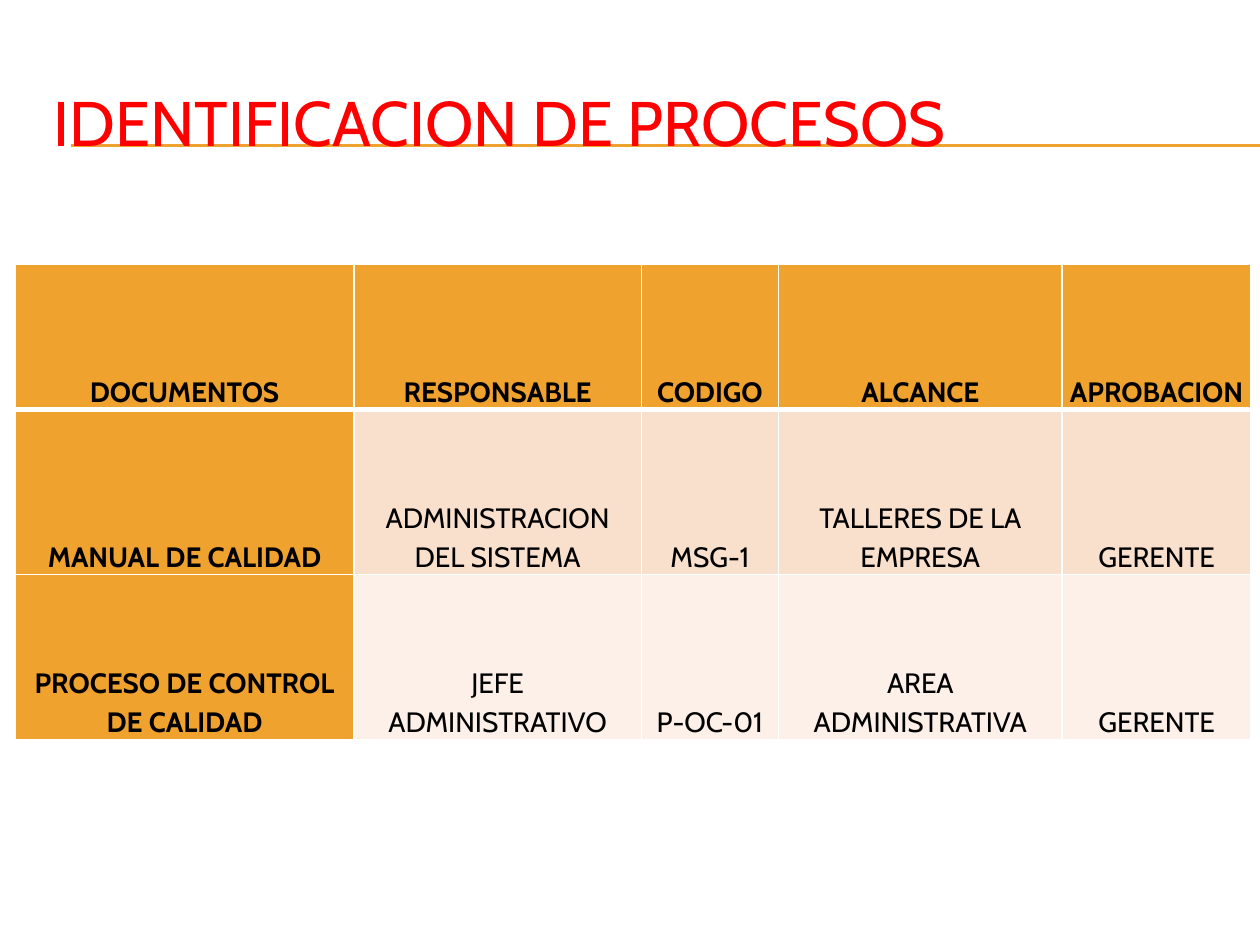
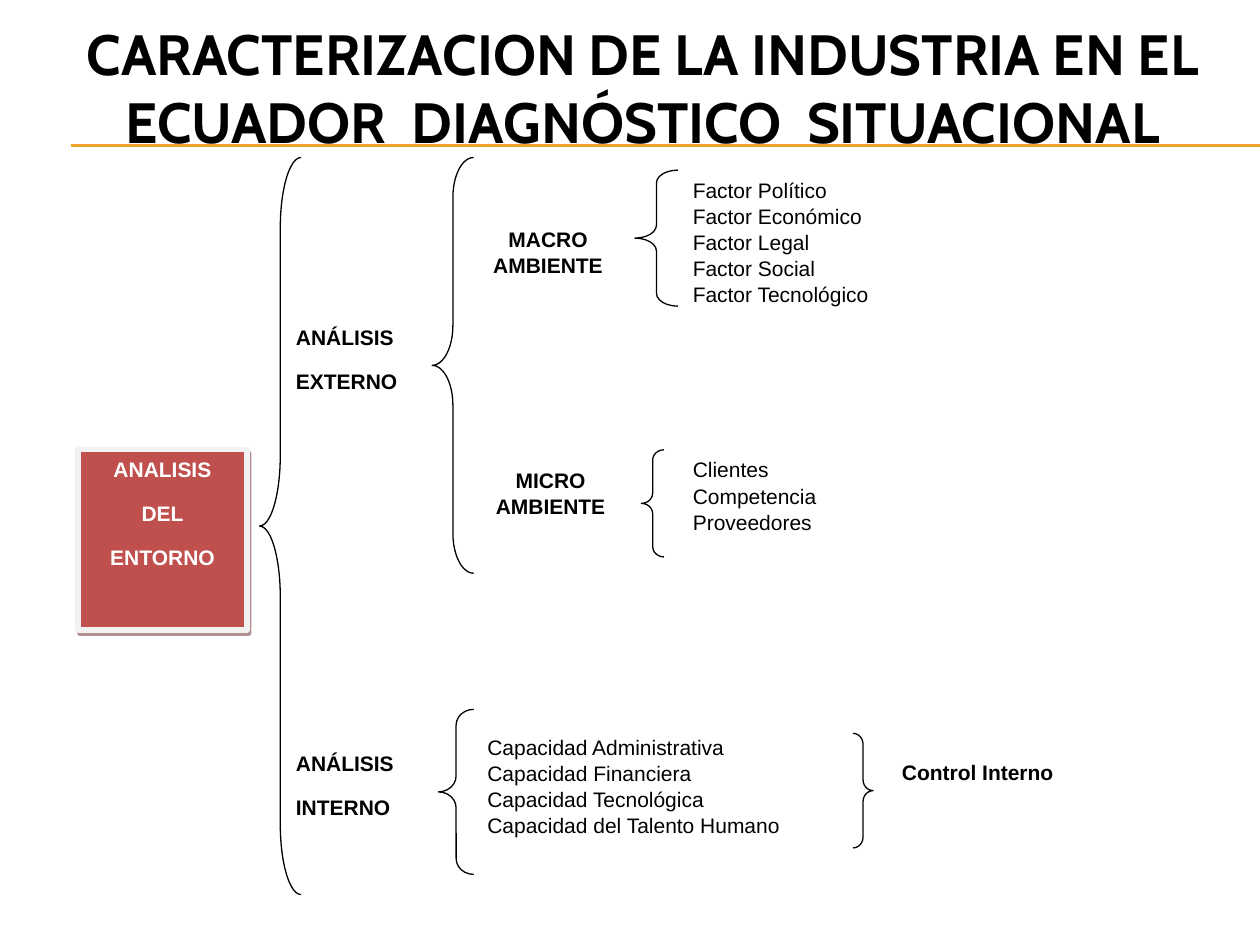
import dataclasses

import lxml.etree
import pptx
import pptx.dml.color
import pptx.enum.shapes
import pptx.enum.text
import pptx.oxml.ns
import pptx.slide
import pptx.text.text
import pptx.util

PX_PER_INCH = 100
EMU_PER_PX = 914400 // PX_PER_INCH
ORANGE, PEACH, CREAM = "F0A22E", "F9E0CD", "FCF0E8"
WHITE, BLACK, RED = "FFFFFF", "000000", "FF0000"
BRICK, PALE_GREY, SHADOW = "C0504D", "F2F2F2", "622423"
TITLE_FONT, BODY_FONT = "Cabin", "Arial"

ALIGN = pptx.enum.text.PP_ALIGN
ANCHOR = pptx.enum.text.MSO_ANCHOR
SHAPE = pptx.enum.shapes.MSO_SHAPE


@dataclasses.dataclass(frozen=True)
class Area:
    left: int
    top: int
    width: int
    height: int

    def emu(self) -> tuple[int, int, int, int]:
        return px(self.left), px(self.top), px(self.width), px(self.height)


@dataclasses.dataclass(frozen=True)
class Style:
    size: float
    font: str = BODY_FONT
    color: str = BLACK
    bold: bool = False
    align: ALIGN = ALIGN.LEFT
    line_spacing: float = 1.0


@dataclasses.dataclass(frozen=True)
class Label:
    area: Area
    lines: tuple[str, ...]
    style: Style
    space_after: int = 0
    fill: str = WHITE
    line: str = WHITE
    line_width: float = 0.75


@dataclasses.dataclass(frozen=True)
class Brace:
    area: Area
    curve: float
    kind: SHAPE = SHAPE.LEFT_BRACE


LIST = Style(12, line_spacing=1.04)
HEADING = dataclasses.replace(LIST, bold=True)
CENTERED = dataclasses.replace(HEADING, align=ALIGN.CENTER)
ROOT = dataclasses.replace(CENTERED, color=WHITE)
CELL = Style(16, TITLE_FONT, align=ALIGN.CENTER, line_spacing=1.15)

PROCESS_AREA = Area(12, 210, 980, 377)
PROCESS_COLUMNS = (269, 228, 109, 225, 150)
PROCESS_ROWS = (115, 131, 131)
ROW_FILLS = (ORANGE, PEACH, CREAM)
PROCESSES = (
    ("DOCUMENTOS", "RESPONSABLE", "CODIGO", "ALCANCE", "APROBACION"),
    ("MANUAL DE CALIDAD", "ADMINISTRACION DEL SISTEMA", "MSG-1",
     "TALLERES DE LA EMPRESA", "GERENTE"),
    ("PROCESO DE CONTROL DE CALIDAD", "JEFE ADMINISTRATIVO", "P-OC-01",
     "AREA ADMINISTRATIVA", "GERENTE"),
)

LABELS = (
    Label(Area(706, 597, 240, 28), ("Control Interno",), HEADING),
    Label(Area(225, 252, 119, 83), ("ANÁLISIS", "EXTERNO"), HEADING, 10),
    Label(Area(225, 590, 119, 83), ("ANÁLISIS", "INTERNO"), HEADING, 10),
    Label(Area(366, 174, 138, 69), ("MACRO AMBIENTE",), CENTERED),
    Label(Area(368, 365, 138, 69), ("MICRO AMBIENTE",), CENTERED),
    Label(Area(540, 135, 197, 124),
          ("Factor Político", "Factor Económico", "Factor Legal",
           "Factor Social", "Factor Tecnológico"), LIST),
    Label(Area(540, 357, 161, 77), ("Clientes", "Competencia", "Proveedores"), LIST),
    Label(Area(377, 577, 313, 104),
          ("Capacidad Administrativa", "Capacidad Financiera",
           "Capacidad Tecnológica", "Capacidad del Talento Humano"), LIST),
)
BRACES = (
    Brace(Area(504, 135, 34, 108), 0.3),
    Brace(Area(509, 357, 18, 85), 0.45),
    Brace(Area(348, 563, 28, 131), 0.45),
    Brace(Area(343, 125, 33, 330), 0.96),
    Brace(Area(677, 582, 16, 91), 0.54, SHAPE.RIGHT_BRACE),
    Brace(Area(206, 125, 33, 585), 1.7),
)
ENVIRONMENT = Label(Area(62, 357, 134, 143), ("ANALISIS", "DEL", "ENTORNO"),
                    ROOT, 10, BRICK, PALE_GREY, 3)


def px(length: int) -> int:
    return pptx.util.Emu(length * EMU_PER_PX)


def rgb(color: str) -> pptx.dml.color.RGBColor:
    return pptx.dml.color.RGBColor.from_string(color)


def add_xml(parent, tag: str, **attributes: str):
    return lxml.etree.SubElement(parent, pptx.oxml.ns.qn(tag), attributes)


def write(frame: pptx.text.text.TextFrame, lines: tuple[str, ...], style: Style,
          space_after: int = 0) -> None:
    frame.word_wrap = True
    for index, line in enumerate(lines):
        para = frame.add_paragraph() if index else frame.paragraphs[0]
        para.text = line
        para.alignment = style.align
        para.line_spacing = style.line_spacing
        para.space_after = pptx.util.Pt(space_after)
        para.font.name = style.font
        para.font.size = pptx.util.Pt(style.size)
        para.font.bold = style.bold
        para.font.color.rgb = rgb(style.color)


def add_page(deck, title: str, area: Area, style: Style) -> pptx.slide.Slide:
    page = deck.slides.add_slide(deck.slide_layouts[6])
    for top in (115, 116):
        rule = page.shapes.add_connector(
            pptx.enum.shapes.MSO_CONNECTOR.STRAIGHT, px(56), px(top), px(1000), px(top))
        rule.line.color.rgb = rgb(ORANGE)
        rule.line.width = pptx.util.Pt(0.75)
        add_xml(rule._element.spPr, "a:effectLst")
    box = page.shapes.add_textbox(*area.emu())
    box.text_frame.vertical_anchor = ANCHOR.MIDDLE
    write(box.text_frame, (title,), style)
    return page


def add_label(page: pptx.slide.Slide, label: Label):
    box = page.shapes.add_shape(SHAPE.RECTANGLE, *label.area.emu())
    box.shadow.inherit = False
    box.fill.solid()
    box.fill.fore_color.rgb = rgb(label.fill)
    box.line.color.rgb = rgb(label.line)
    box.line.width = pptx.util.Pt(label.line_width)
    box.text_frame.vertical_anchor = ANCHOR.TOP
    write(box.text_frame, label.lines, label.style, label.space_after)
    return box


def add_brace(page: pptx.slide.Slide, brace: Brace) -> None:
    shape = page.shapes.add_shape(brace.kind, *brace.area.emu())
    shape.shadow.inherit = False
    shape.adjustments[0] = brace.curve
    shape.fill.background()
    shape.line.color.rgb = rgb(BLACK)
    shape.line.width = pptx.util.Pt(0.75)


def add_drop_shadow(box) -> None:
    effects = box._element.spPr.find(pptx.oxml.ns.qn("a:effectLst"))
    shadow = add_xml(effects, "a:outerShdw", blurRad="0",
                     dist=str(pptx.util.Pt(2.2)), dir=str(63 * 60000),
                     algn="ctr", rotWithShape="0")
    color = add_xml(shadow, "a:srgbClr", val=SHADOW)
    add_xml(color, "a:alpha", val="50000")


def add_borders(cell, top: int, bottom: int) -> None:
    properties = cell._tc.get_or_add_tcPr()
    for side, width in (("L", 1), ("R", 1), ("T", top), ("B", bottom)):
        border = add_xml(properties, f"a:ln{side}", w=str(pptx.util.Pt(width)))
        add_xml(add_xml(border, "a:solidFill"), "a:srgbClr", val=WHITE)


def add_process_table(page: pptx.slide.Slide) -> None:
    table = page.shapes.add_table(
        len(PROCESS_ROWS), len(PROCESS_COLUMNS), *PROCESS_AREA.emu()).table
    table.horz_banding = False
    for column, width in zip(table.columns, PROCESS_COLUMNS):
        column.width = px(width)
    for row, height in zip(table.rows, PROCESS_ROWS):
        row.height = px(height)
    for row, texts in enumerate(PROCESSES):
        for column, text in enumerate(texts):
            cell = table.cell(row, column)
            is_heading = row == 0 or column == 0
            add_borders(cell, 3 if row == 1 else 1, 3 if row == 0 else 1)
            cell.fill.solid()
            cell.fill.fore_color.rgb = rgb(ORANGE if is_heading else ROW_FILLS[row])
            cell.vertical_anchor = ANCHOR.BOTTOM
            cell.margin_left = cell.margin_right = px(5)
            cell.margin_top = cell.margin_bottom = 0
            write(cell.text_frame, (text,), dataclasses.replace(CELL, bold=is_heading))


def main() -> None:
    deck = pptx.Presentation()
    deck.slide_width, deck.slide_height = px(1000), px(750)

    processes = add_page(deck, "IDENTIFICACION DE PROCESOS", Area(33, 50, 950, 92),
                         Style(36, TITLE_FONT, RED))
    add_process_table(processes)

    diagnosis = add_page(
        deck, "CARACTERIZACION DE LA INDUSTRIA EN EL ECUADOR  DIAGNÓSTICO  SITUACIONAL",
        Area(20, 23, 980, 92),
        Style(32.4, TITLE_FONT, bold=True, align=ALIGN.CENTER))
    for label in LABELS:
        add_label(diagnosis, label)
    for brace in BRACES:
        add_brace(diagnosis, brace)
    add_drop_shadow(add_label(diagnosis, ENVIRONMENT))

    deck.save("out.pptx")


if __name__ == "__main__":
    main()
